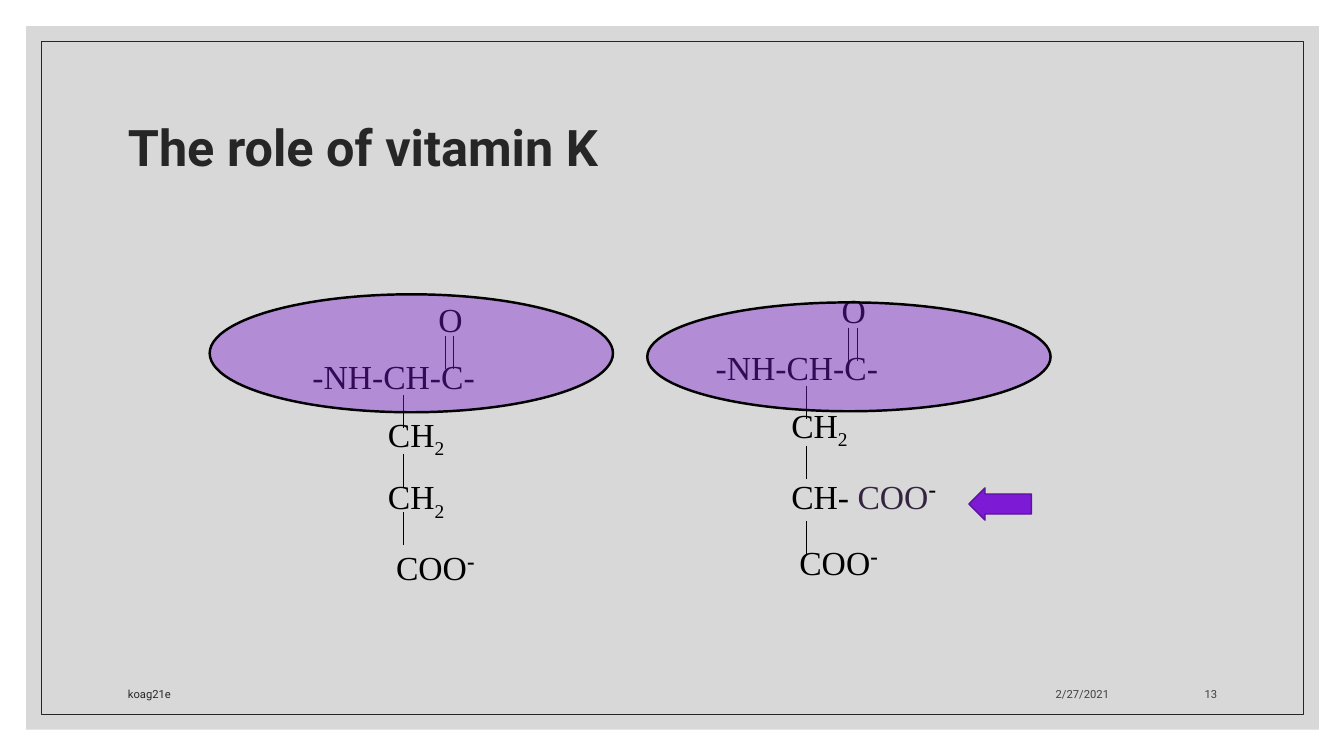
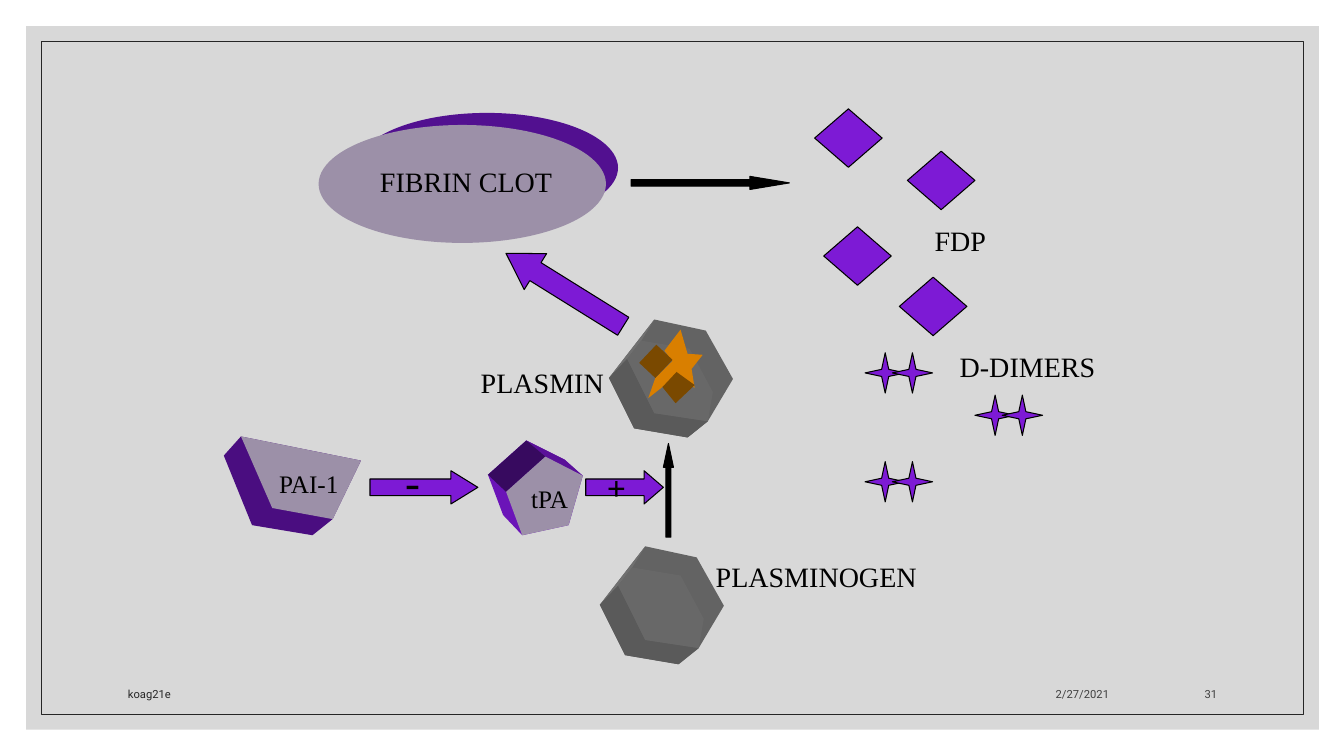
"""Build two coagulation slides: the role of vitamin K, and fibrinolysis."""
from lxml import etree
from pptx import Presentation
from pptx.dml.color import RGBColor
from pptx.enum.shapes import MSO_CONNECTOR, MSO_SHAPE
from pptx.enum.text import MSO_ANCHOR, PP_ALIGN
from pptx.oxml.ns import qn
from pptx.util import Inches, Pt

RECT, OVAL, DIAMOND = MSO_SHAPE.RECTANGLE, MSO_SHAPE.OVAL, MSO_SHAPE.DIAMOND
STAR4 = MSO_SHAPE.STAR_4_POINT
LEFT_ARROW, RIGHT_ARROW, UP_ARROW = MSO_SHAPE.LEFT_ARROW, MSO_SHAPE.RIGHT_ARROW, MSO_SHAPE.UP_ARROW
STRAIGHT = MSO_CONNECTOR.STRAIGHT
TOP, MIDDLE, BOTTOM = MSO_ANCHOR.TOP, MSO_ANCHOR.MIDDLE, MSO_ANCHOR.BOTTOM
LEFT, RIGHT = PP_ALIGN.LEFT, PP_ALIGN.RIGHT
SANS, SERIF = "Roboto", "Times New Roman"

C = {
    "band": "BFBFBF", "dark": "262626", "footer": "404040", "black": "000000",
    "purple": "7D1AD5", "edge": "5C139E", "plum": "342441",
    "face": "9C90A8", "side": "4A0D80", "back": "521090",
    "shade": "370A5F", "bright": "6B14B8", "violet": "5A1199",
    "hex_face": "686868", "hex_base": "636363", "hex_low": "5A5A5A", "hex_left": "707070",
    "orange": "D97F00", "brown": "7A4900",
}


def paint(sp, fill=None, line=None, width=0.75, alpha=None):
    sp.shadow.inherit = False
    if fill:
        sp.fill.solid()
        sp.fill.fore_color.rgb = RGBColor.from_string(C[fill])
        if alpha:
            color = sp.fill._xPr.find(".//" + qn("a:srgbClr"))
            etree.SubElement(color, qn("a:alpha")).set("val", str(alpha * 1000))
    else:
        sp.fill.background()
    if line:
        sp.line.color.rgb = RGBColor.from_string(C[line])
        sp.line.width = Pt(width)
    else:
        sp.line.fill.background()


def text(s, box, paras, size=20, font=SERIF, color="black", bold=False,
         align=LEFT, anchor=TOP, before=50, wrap=True):
    tf = s.shapes.add_textbox(*map(Inches, box)).text_frame
    tf.word_wrap = wrap
    tf.vertical_anchor = anchor
    if isinstance(paras, str):
        paras = [(0, [(paras, {})])]
    for i, (indent, runs) in enumerate(paras):
        p = tf.paragraphs[0] if i == 0 else tf.add_paragraph()
        p.alignment = align
        pPr = p._p.get_or_add_pPr()
        pPr.set("marL", str(Inches(indent)))
        if before:
            spacing = etree.SubElement(pPr, qn("a:spcBef"))
            etree.SubElement(spacing, qn("a:spcPct")).set("val", str(before * 1000))
        for words, style in runs:
            r = p.add_run()
            r.text = words
            r.font.name = font
            r.font.size = Pt(style.get("size", size))
            r.font.bold = style.get("bold", bold)
            r.font.color.rgb = RGBColor.from_string(C[style.get("color", color)])
            if "base" in style:
                r._r.get_or_add_rPr().set("baseline", str(style["base"] * 1000))


prs = Presentation()
prs.slide_width, prs.slide_height = Inches(13.33), Inches(7.5)
slides = []
for number in ("13", "31"):
    s = prs.slides.add_slide(prs.slide_layouts[6])
    band = s.shapes.add_shape(RECT, *map(Inches, (0.26, 0.26, 12.82, 6.98)))
    paint(band, "band", alpha=60)
    frame = s.shapes.add_shape(RECT, *map(Inches, (0.41, 0.41, 12.52, 6.68)))
    paint(frame, line="dark", width=0.5)
    for left, width, words, color, align in (
            (7.94, 3.16, "2/27/2021", "footer", RIGHT),
            (1.17, 6.36, "koag21e", "dark", LEFT),
            (11.25, 0.92, number, "footer", RIGHT)):
        text(s, (left, 6.6, width, 0.4), words, size=8, font=SANS, color=color,
             align=align, anchor=BOTTOM, before=0)
    slides.append(s)
vitamin, lysis = slides

# Vitamin K
text(vitamin, (1.17, 0.7, 11, 1.5), "The role of vitamin K", size=36, font=SANS,
     color="dark", bold=True, anchor=MIDDLE, before=0)
SUB = {"base": -25}
MINUS = ("-", {"size": 28, "bold": True, "base": 30})
backbone = [(1.25, [("O", {})]), (0, [("-NH-CH-C-", {})]), (0.75, [("CH", {}), ("2", SUB)])]
acid = (0.83, [("COO", {}), MINUS])
glutamate = (0.75, [("CH", {}), ("2", SUB)])
carboxylated = (0.75, [("CH- ", {}), ("COO", {"color": "plum"}), MINUS])
molecules = (
    ((3, 2.92, 2.17, 3.03), glutamate, 3.33, (3.92, 4.5, 5.08), (2.08, 2.92, 4, 1.17)),
    ((7, 2.83, 3, 3.74), carboxylated, 3.25, (3.83, 4.42, 5.17), (6.42, 3, 4, 1.08)),
)
for box, group, double_top, single_tops, oval in molecules:
    text(vitamin, box, backbone + [group, acid], size=24)
    bonds = [(box[0] + dx, double_top) for dx in (1.42, 1.5)]
    bonds += [(box[0] + 1, top) for top in single_tops]
    for x, y in bonds:
        bond = vitamin.shapes.add_connector(
            STRAIGHT, Inches(x), Inches(y), Inches(x), Inches(y + 0.33))
        bond.line.color.rgb = RGBColor.from_string(C["black"])
        bond.line.width = Pt(0.75)
        etree.SubElement(bond._element.spPr, qn("a:effectLst"))
    sp = vitamin.shapes.add_shape(OVAL, *map(Inches, oval))
    paint(sp, "purple", "black", 1.75, alpha=40)
pointer = vitamin.shapes.add_shape(LEFT_ARROW, *map(Inches, (9.61, 4.84, 0.62, 0.32)))
pointer.adjustments[0], pointer.adjustments[1] = 0.62, 0.5
paint(pointer, "purple", "edge", 1)

# Fibrinolysis
for box, fill in (((3.53, 1.12, 2.6, 1.09), "back"), ((3.16, 1.24, 2.85, 1.17), "face")):
    paint(lysis.shapes.add_shape(OVAL, *map(Inches, box)), fill)
for x, y in ((8.08, 1.08), (8.17, 2.25), (8.92, 2.75), (9, 1.5)):
    sp = lysis.shapes.add_shape(DIAMOND, *map(Inches, (x, y, 0.67, 0.58)))
    paint(sp, "purple", "black")
for x, y in ((8.58, 3.5), (8.58, 4.58), (9.67, 3.92)):
    for dx in (0, 0.27):
        sp = lysis.shapes.add_shape(STAR4, *map(Inches, (x + dx, y, 0.4, 0.4)))
        sp.adjustments[0] = 0.125
        paint(sp, "purple", "black")

# Solid bodies, in hundredths of an inch
hexagon = (
    ("hex_base", [(595, 600), (640, 542), (691, 553), (718, 601), (693, 643), (673, 659), (620, 650)]),
    ("hex_left", [(595, 600), (640, 542), (627, 563), (613, 581)]),
    ("hex_low", [(595, 600), (613, 581), (640, 635), (693, 643), (673, 659), (620, 650)]),
    ("hex_face", [(613, 581), (627, 563), (675, 571), (698, 614), (693, 643), (640, 635)]),
)
star = (
    ("orange", [(675, 327), (682, 351), (697, 352), (686, 366), (689, 385), (672, 370),
                (657, 384), (643, 395), (650, 375), (667, 358), (659, 348)]),
    ("brown", [(634, 360), (651, 342), (667, 357), (650, 375)]),
    ("brown", [(657, 384), (671, 369), (689, 382), (670, 400)]),
)
inhibitor = (
    ("side", [(239, 433), (358, 457), (330, 515), (310, 531), (250, 521), (222, 452)]),
    ("face", [(239, 433), (358, 457), (330, 515), (270, 504)]),
)
activator = (
    ("bright", [(522, 437), (560, 456), (578, 472), (564, 521), (518, 531), (499, 511), (484, 471)]),
    ("violet", [(522, 437), (560, 456), (578, 472), (541, 453)]),
    ("shade", [(522, 437), (541, 453), (502, 488), (484, 471)]),
    ("face", [(541, 453), (578, 472), (564, 521), (518, 531), (502, 488)]),
)
for solid, dx, dy in ((hexagon, 0, 0), (hexagon, 9, -225), (star, 0, 0),
                      (inhibitor, 0, 0), (activator, 0, 0)):
    for fill, points in solid:
        points = [(x + dx, y + dy) for x, y in points]
        outline = lysis.shapes.build_freeform(*points[0], scale=Inches(0.01))
        outline.add_line_segments(points[1:], close=True)
        paint(outline.convert_to_shape(), fill)

for kind, box, head, fill, turn in (
        (RIGHT_ARROW, (6.26, 1.75, 1.57, 0.13), 3.01, "black", 0),
        (UP_ARROW, (6.58, 4.4, 0.1, 0.93), 2.36, "black", 0),
        (RIGHT_ARROW, (3.67, 4.67, 1.07, 0.33), 0.81, "purple", 0),
        (RIGHT_ARROW, (5.81, 4.67, 0.77, 0.33), 0.58, "purple", 0),
        (UP_ARROW, (5.39, 2.19, 0.42, 1.37), 0.82, "purple", 301.9)):
    sp = lysis.shapes.add_shape(kind, *map(Inches, box))
    sp.adjustments[0], sp.adjustments[1] = 0.5, head
    sp.rotation = turn
    paint(sp, fill, "black")

for words, box, size in (
        ("FIBRIN CLOT", (3.67, 1.58, 1.92, 0.43), 20),
        ("PLASMINOGEN", (7, 5.5, 2.25, 0.43), 20),
        ("PLASMIN", (4.67, 3.58, 1.5, 0.43), 20),
        ("FDP", (9.17, 2.17, 0.75, 0.43), 20),
        ("D-DIMERS", (9.42, 3.42, 1.67, 0.43), 20),
        ("PAI-1", (2.67, 4.6, 1.08, 0.4), 18),
        ("tPA", (5.17, 4.75, 0.67, 0.4), 18)):
    text(lysis, box, words, size=size)
text(lysis, (3.92, 4.45, 0.35, 0.63), "-", size=32, before=0, wrap=False)
text(lysis, (5.92, 4.58, 0.67, 0.5), "+", size=24, bold=True)

prs.save("out.pptx")
